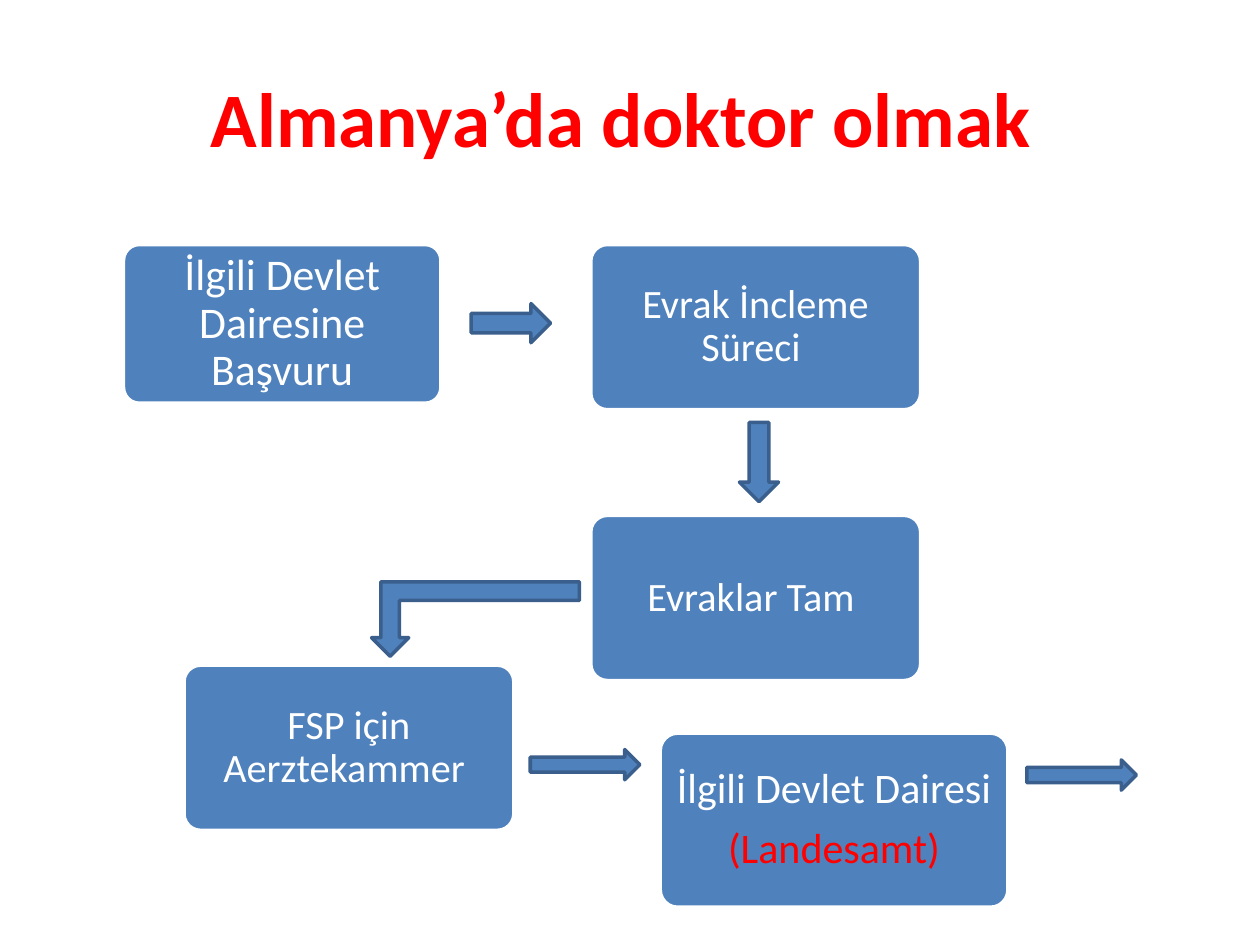
from pptx import Presentation
from pptx import util as u
from pptx.dml.color import RGBColor
from pptx.enum import shapes, text

COLORS = {"blue": "4F81BD", "edge": "3A5F8C", "white": "FFFFFF", "red": "FF0000"}
FONT = "Calibri"
STEP_SIZE = (6.65, 3.33)
SHORT_ARROW = (1.6, 0.79)
LONG_ARROW = (2.21, 0.61)

# Steps: left, top, size in cm, font size, lines with colours
STEPS = [
    (2.49, 4.93, (6.4, 3.2), 25, [("İlgili Devlet Dairesine Başvuru", "white")]),
    (11.91, 4.93, STEP_SIZE, 23, [("Evrak İncleme Süreci ", "white")]),
    (11.91, 10.39, STEP_SIZE, 23, [("Evraklar Tam ", "white")]),
    (3.71, 13.41, STEP_SIZE, 23, [("FSP için Aerztekammer ", "white")]),
    (13.31, 14.78, (7.01, 3.51), 24,
     [("İlgili Devlet Dairesi", "white"), ("(Landesamt)", "red")]),
]

# Arrows: preset, left, top, size in cm, rotation
RIGHT = shapes.MSO_SHAPE.RIGHT_ARROW
BENT = shapes.MSO_SHAPE.BENT_UP_ARROW
ARROWS = [
    (RIGHT, 9.5, 6.12, SHORT_ARROW, 0),
    (RIGHT, 14.5, 8.92, SHORT_ARROW, 90),
    (BENT, 7.49, 11.73, (4.19, 1.5), 180),
    (RIGHT, 10.69, 15.11, LONG_ARROW, 0),
    (RIGHT, 20.7, 15.32, LONG_ARROW, 0),
]


def color(name):
    return RGBColor.from_string(COLORS[name])


def add_run(para, words, size, color_name, bold=False):
    run = para.add_run()
    run.text = words
    run.font.name = FONT
    run.font.size = u.Pt(size)
    run.font.bold = bold
    run.font.color.rgb = color(color_name)


def add_block(page, preset, left, top, size, line_name):
    """Add a flat blue shape with a 2 pt outline."""
    block = page.shapes.add_shape(
        preset, u.Cm(left), u.Cm(top), u.Cm(size[0]), u.Cm(size[1]))
    block.shadow.inherit = False
    block.fill.solid()
    block.fill.fore_color.rgb = color("blue")
    block.line.color.rgb = color(line_name)
    block.line.width = u.Pt(2)
    return block


def add_step(page, left, top, size, font_size, lines):
    box = add_block(page, shapes.MSO_SHAPE.ROUNDED_RECTANGLE,
                    left, top, size, "white")
    box.adjustments[0] = 0.1
    frame = box.text_frame
    frame.word_wrap = True
    frame.vertical_anchor = text.MSO_ANCHOR.MIDDLE
    frame.margin_left = frame.margin_right = u.Cm(0.05)
    frame.margin_top = frame.margin_bottom = u.Cm(0.05)
    for index, (words, color_name) in enumerate(lines):
        para = frame.add_paragraph() if index else frame.paragraphs[0]
        para.alignment = text.PP_ALIGN.CENTER
        para.line_spacing = 0.9
        para.space_after = u.Pt(0.35 * font_size)
        add_run(para, words, font_size, color_name)


def add_arrow(page, preset, left, top, size, rotation):
    arrow = add_block(page, preset, left, top, size, "edge")
    arrow.rotation = rotation


def set_title(page, words):
    title = page.shapes.title
    title.left, title.top = u.Cm(1.27), u.Cm(0.76)
    title.width, title.height = u.Cm(22.86), u.Cm(3.18)
    title.text_frame.vertical_anchor = text.MSO_ANCHOR.MIDDLE
    para = title.text_frame.paragraphs[0]
    para.alignment = text.PP_ALIGN.CENTER
    add_run(para, words, 44, "red", bold=True)


def main():
    deck = Presentation()
    deck.slide_width, deck.slide_height = u.Cm(25.4), u.Cm(19.05)
    page = deck.slides.add_slide(deck.slide_layouts.get_by_name("Title Only"))

    set_title(page, "Almanya’da doktor olmak ")
    for step in STEPS:
        add_step(page, *step)
    for arrow in ARROWS:
        add_arrow(page, *arrow)

    deck.save("out.pptx")


if __name__ == "__main__":
    main()
